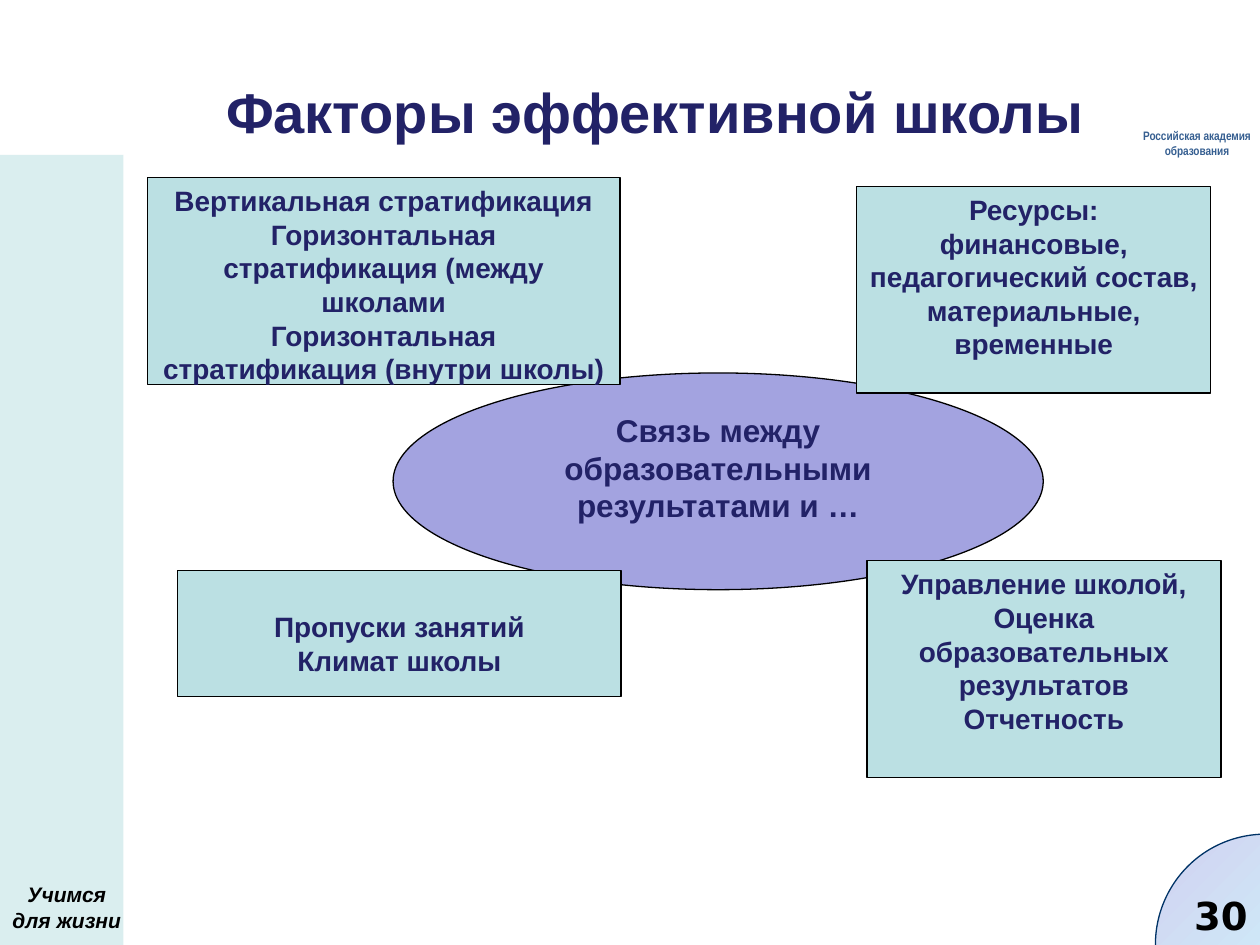
import pptx
import pptx.dml.color
import pptx.enum.shapes
import pptx.enum.text
import pptx.util
import lxml.etree

COLUMNS, ROWS = 100, 75
CENTER = pptx.enum.text.PP_ALIGN.CENTER
RIGHT = pptx.enum.text.PP_ALIGN.RIGHT
RECTANGLE = pptx.enum.shapes.MSO_SHAPE.RECTANGLE
OVAL = pptx.enum.shapes.MSO_SHAPE.OVAL

THEME = {
    "ink": "222267", "black": "000000", "academy": "365F91",
    "factor": "BBE0E3", "core": "A3A3E0",
    "corner_line": "003366", "corner_start": "D1D1F0", "corner_end": "CCFFFF",
    "strip_opacity": 54, "line_width": 0.75,
    "title": {"size": 32, "name": "Arial", "bold": True},
    "core_text": {"size": 18, "name": "Arial", "bold": True},
    "factor_text": {"size": 16, "name": "Arial", "bold": True},
    "slogan": {"size": 12, "name": "Arial", "bold": True, "italic": True},
    "number": {"size": 22, "name": "DejaVu Sans", "bold": True},
    "academy_text": {"size": 7, "name": "Arial Narrow", "bold": True},
}

TITLE = ("Факторы эффективной школы", (7, 4.5, 90, 8.6))
STRIP = (0, 12.3, 9.8, 62.7)
CORNER = (91.7, 66.2, 17.5, 17.5)
LABELS = [
    ("Учимся для жизни", (0, 69.5, 10.6, 5.1), "slogan", "black", CENTER,
     {"margin_left": 0.08, "margin_right": 0.08}),
    ("30", (91.9, 70.3, 8.1, 4.7), "number", "black", RIGHT, {}),
    ("Российская академия образования", (90, 9.7, 9.6, 2.6), "academy_text", "academy", CENTER,
     {"margin_left": 0.06, "margin_right": 0.02}),
]
CORE = (["Связь между образовательными результатами и …"], (31.2, 29.6, 51.6, 17.2))
FACTORS = [
    (["Ресурсы:\vфинансовые, педагогический состав, материальные, временные"],
     (68, 14.8, 28.1, 16.4), {}),
    (["Управление школой, Оценка образовательных результатов Отчетность"],
     (68.8, 44.5, 28.1, 17.2), {}),
    (["Вертикальная стратификация",
      "Горизонтальная стратификация (между школами",
      "Горизонтальная стратификация (внутри школы)"],
     (11.7, 14.1, 37.5, 16.4), {}),
    (["Пропуски занятий", "Климат школы"], (14.1, 45.3, 35.2, 10), {"margin_top": 0.31}),
]

presentation = pptx.Presentation()
presentation.slide_width = pptx.util.Inches(10)
presentation.slide_height = pptx.util.Inches(7.5)
slide = presentation.slides.add_slide(presentation.slide_layouts[5])


def color(key):
    return pptx.dml.color.RGBColor.from_string(THEME[key])


def place(cells):
    column = presentation.slide_width / COLUMNS
    row = presentation.slide_height / ROWS
    return [round(cell * unit) for cell, unit in zip(cells, (column, row, column, row))]


def write(shape, paragraphs, style, ink="ink", alignment=CENTER, margins=None, anchor="TOP"):
    frame = shape.text_frame
    frame.word_wrap = True
    frame.vertical_anchor = pptx.enum.text.MSO_ANCHOR[anchor]
    for name, value in (margins or {}).items():
        setattr(frame, name, pptx.util.Inches(value))
    frame.text = "\n".join(paragraphs)
    for paragraph in frame.paragraphs:
        paragraph.alignment = alignment
        for name, value in THEME[style].items():
            setattr(paragraph.font, name, pptx.util.Pt(value) if name == "size" else value)
        paragraph.font.color.rgb = color(ink)


def add_panel(kind, cells, fill, line=None):
    shape = slide.shapes.add_shape(kind, *place(cells))
    shape.shadow.inherit = False
    shape.fill.solid()
    shape.fill.fore_color.rgb = color(fill)
    if line:
        shape.line.color.rgb = color(line)
        shape.line.width = pptx.util.Pt(THEME["line_width"])
    else:
        shape.line.fill.background()
    return shape


title = slide.shapes.title
title.left, title.top, title.width, title.height = place(TITLE[1])
write(title, [TITLE[0]], "title", anchor="MIDDLE")

strip = add_panel(RECTANGLE, STRIP, "factor")
namespace = "{http://schemas.openxmlformats.org/drawingml/2006/main}"
strip_color = strip.fill._xPr.find(f".//{namespace}srgbClr")
lxml.etree.SubElement(strip_color, f"{namespace}alpha", val=str(THEME["strip_opacity"] * 1000))

corner = add_panel(OVAL, CORNER, "corner_start", "corner_line")
corner.fill.gradient()
corner.fill.gradient_angle = 315
for stop, position, key in zip(corner.fill.gradient_stops, (0, 1), ("corner_start", "corner_end")):
    stop.position = position
    stop.color.rgb = color(key)

for text, cells, style, ink, alignment, margins in LABELS:
    write(slide.shapes.add_textbox(*place(cells)), [text], style, ink, alignment, margins)

write(add_panel(OVAL, CORE[1], "core", "black"), CORE[0], "core_text")
for paragraphs, cells, margins in FACTORS:
    write(add_panel(RECTANGLE, cells, "factor", "black"), paragraphs, "factor_text", margins=margins)

presentation.save("out.pptx")
